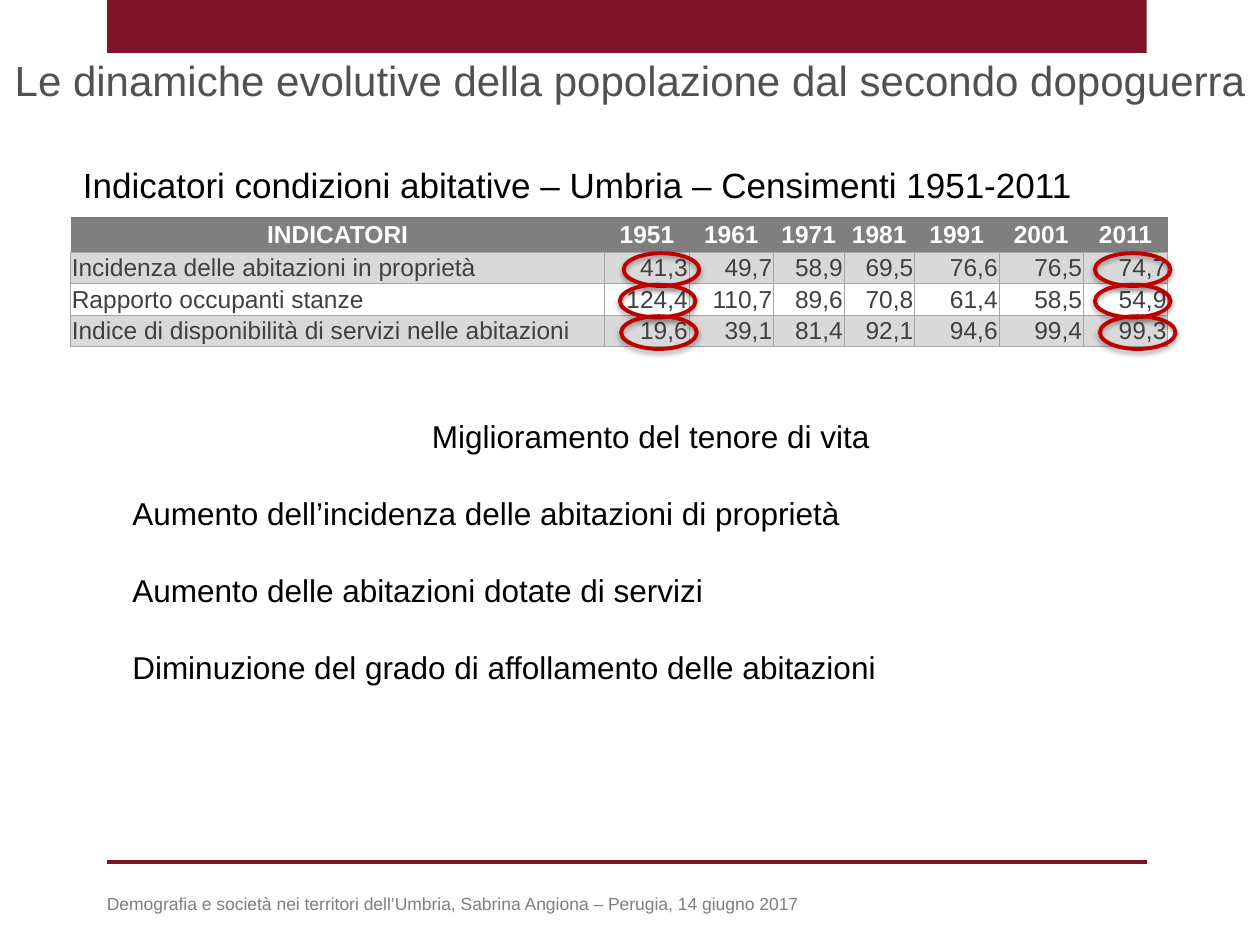
from lxml.etree import SubElement
from pptx import Presentation
from pptx.dml.color import RGBColor
from pptx.enum.shapes import MSO_CONNECTOR, MSO_SHAPE
from pptx.enum.text import MSO_ANCHOR, MSO_AUTO_SIZE, PP_ALIGN
from pptx.oxml import parse_xml
from pptx.oxml.ns import nsdecls, qn
from pptx.util import Inches, Pt

WINE, GREY, RED = "7F142A", "7F7F7F", "C00000"
BAND, BORDER = "D9D9D9", "A6A6A6"
HEADER = ["INDICATORI", "1951", "1961", "1971", "1981", "1991", "2001", "2011"]
INDICATORS = [
    ["Incidenza delle abitazioni in proprietà",
     "41,3", "49,7", "58,9", "69,5", "76,6", "76,5", "74,7"],
    ["Rapporto occupanti stanze",
     "124,4", "110,7", "89,6", "70,8", "61,4", "58,5", "54,9"],
    ["Indice di disponibilità di servizi nelle abitazioni",
     "19,6", "39,1", "81,4", "92,1", "94,6", "99,4", "99,3"],
]
COLUMNS = [4.24, 0.67, 0.67, 0.56, 0.56, 0.67, 0.67, 0.67]
ROWS = [0.28, 0.25, 0.25, 0.25]
CONCLUSIONS = [
    "Aumento dell’incidenza delle abitazioni di proprietà",
    "Aumento delle abitazioni dotate di servizi",
    "Diminuzione del grado di affollamento delle abitazioni",
]


def color(value):
    return RGBColor.from_string(value)


def inches(box):
    return [Inches(length) for length in box]


def write(para, text, size=18, ink="000000", bold=False, align=PP_ALIGN.LEFT, before=0):
    para.alignment = align
    para.space_before = Pt(before)
    span = para.add_run()
    span.text = text
    span.font.name = "Arial"
    span.font.size = Pt(size)
    span.font.bold = bold
    span.font.color.rgb = color(ink)


def place(placeholder, box):
    placeholder.left, placeholder.top, placeholder.width, placeholder.height = inches(box)
    placeholder.text_frame.auto_size = MSO_AUTO_SIZE.NONE


def add_text(page, box, text, **style):
    frame = page.shapes.add_textbox(*inches(box)).text_frame
    frame.word_wrap = True
    write(frame.paragraphs[0], text, **style)


def add_frame(page, left, right, bar_height, rule_top):
    bar = page.shapes.add_shape(
        MSO_SHAPE.RECTANGLE, *inches((left, 0, right - left, bar_height)))
    bar.shadow.inherit = False
    bar.fill.solid()
    bar.fill.fore_color.rgb = color(WINE)
    bar.line.fill.background()
    rule = page.shapes.add_connector(
        MSO_CONNECTOR.STRAIGHT, *inches((left, rule_top, right, rule_top)))
    rule.line.color.rgb = color(WINE)
    rule.line.width = Pt(2)
    SubElement(rule._element.spPr, qn("a:effectLst"))


def add_title(page, box, text):
    title = page.shapes.title
    place(title, box)
    frame = title.text_frame
    frame.margin_left = frame.margin_right = 0
    frame.vertical_anchor = MSO_ANCHOR.MIDDLE
    write(frame.paragraphs[0], text, size=24, ink="505150", align=PP_ALIGN.CENTER)


def add_conclusions(page, box, heading, lines):
    body = page.placeholders[1]
    place(body, box)
    frame = body.text_frame
    frame.vertical_anchor = MSO_ANCHOR.TOP
    for index, text in enumerate([heading] + lines):
        para = frame.paragraphs[0] if index == 0 else frame.add_paragraph()
        properties = para._p.get_or_add_pPr()
        properties.set("marL", "0")
        properties.set("indent", "0")
        SubElement(properties, qn("a:buNone"))
        write(para, text, before=22.4 if index else 0,
              align=PP_ALIGN.LEFT if index else PP_ALIGN.CENTER)


def border_cell(cell, sides):
    """Draw thin lines on the named sides and none on the others."""
    for index, side in enumerate("LRTB"):
        paint = (f'<a:solidFill><a:srgbClr val="{BORDER}"/></a:solidFill>'
                 if side in sides else "<a:noFill/>")
        line = parse_xml(f'<a:ln{side} {nsdecls("a")} w="6350">{paint}</a:ln{side}>')
        cell._tc.get_or_add_tcPr().insert(index, line)


def format_cell(cell, text, row, column):
    cell.margin_left = cell.margin_top = cell.margin_right = Inches(0.01)
    cell.margin_bottom = 0
    cell.vertical_anchor = MSO_ANCHOR.MIDDLE
    if row == 2:
        cell.fill.background()
    else:
        cell.fill.solid()
        cell.fill.fore_color.rgb = color(BAND if row else GREY)
    border_cell(cell, "LRTB" if row else "B")
    if row == 0:
        align = PP_ALIGN.CENTER
    else:
        align = PP_ALIGN.RIGHT if column else PP_ALIGN.LEFT
    write(cell.text_frame.paragraphs[0], text, size=14, bold=row == 0,
          ink="404040" if row else "FFFFFF", align=align)


def add_indicators(page, left, top):
    box = inches((left, top, sum(COLUMNS), sum(ROWS)))
    table = page.shapes.add_table(len(ROWS), len(COLUMNS), *box).table
    for column, width in zip(table.columns, COLUMNS):
        column.width = Inches(width)
    for row, height in zip(table.rows, ROWS):
        row.height = Inches(height)
    for row, texts in enumerate([HEADER] + INDICATORS):
        for column, text in enumerate(texts):
            format_cell(table.cell(row, column), text, row, column)


def add_ring(page, left, top):
    ring = page.shapes.add_shape(MSO_SHAPE.OVAL, *inches((left, top, 0.6, 0.26)))
    ring.fill.background()
    ring.line.color.rgb = color(RED)
    ring.line.width = Pt(2.25)
    ring._element.spPr.append(parse_xml(
        f'<a:effectLst {nsdecls("a")}><a:outerShdw blurRad="{Pt(3.1)}" dist="{Pt(1.8)}" '
        'dir="5400000" rotWithShape="0"><a:srgbClr val="000000"><a:alpha val="35000"/>'
        "</a:srgbClr></a:outerShdw></a:effectLst>"))


def add_rings(page, top, pitch):
    """Circle the first and last census year of each indicator."""
    for row, pair in enumerate([(4.95, 8.69), (4.92, 8.69), (4.93, 8.73)]):
        for left in pair:
            add_ring(page, left, top + row * pitch)


def main():
    deck = Presentation()
    deck.slide_width, deck.slide_height = Inches(10), Inches(7.5)
    page = deck.slides.add_slide(deck.slide_layouts[1])
    add_frame(page, left=0.85, right=9.1, bar_height=0.42, rule_top=6.84)
    add_title(page, (0, 0.38, 10, 0.5),
              "Le dinamiche evolutive della popolazione dal secondo dopoguerra")
    add_text(page, (0.56, 1.25, 8.33, 0.44),
             "Indicatori condizioni abitative – Umbria – Censimenti 1951-2011", size=20)
    add_indicators(page, 0.56, 1.72)
    add_rings(page, 2.01, ROWS[1])
    add_conclusions(page, (0.95, 3.26, 8.43, 2.39),
                    "Miglioramento del tenore di vita", CONCLUSIONS)
    add_text(page, (0.75, 7.04, 5.97, 0.27),
             "Demografia e società nei territori dell’Umbria, Sabrina Angiona "
             "– Perugia, 14 giugno 2017", size=10, ink=GREY)
    deck.save("out.pptx")


if __name__ == "__main__":
    main()
